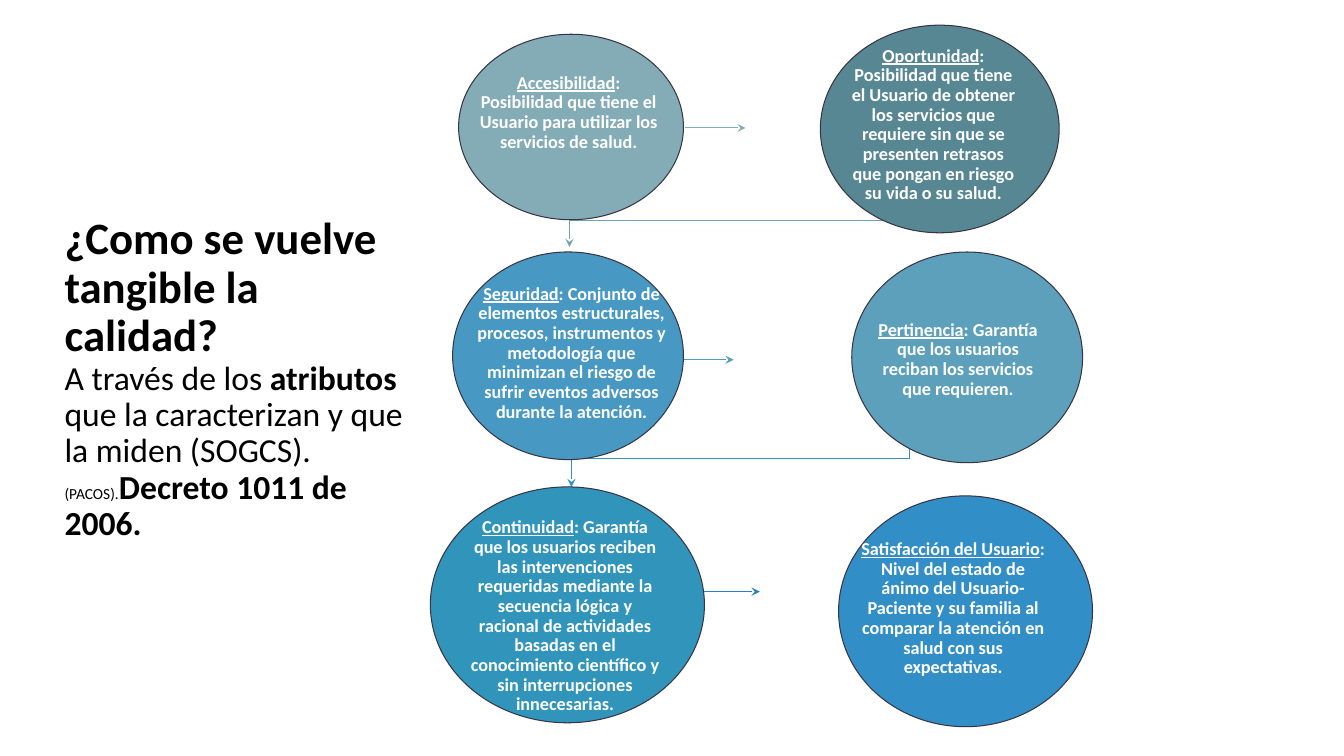
"""Builds a slide on the six attributes that make health care quality tangible."""
from lxml import etree
from pptx import Presentation
from pptx.dml.color import RGBColor
from pptx.enum import shapes, text
from pptx.oxml.ns import qn
from pptx.util import Pt

ATTRIBUTES = [
    ("Accesibilidad", ": Posibilidad que tiene el Usuario para utilizar los servicios de salud.",
     "84ACB6", (327.6, 24.5, 160.6, 132.5), (332, 32.4, 148.3, 96.5)),
    ("Oportunidad", ": Posibilidad que tiene el Usuario de obtener los servicios que requiere sin que se "
     "presenten retrasos que pongan en riesgo su vida o su salud.",
     "578793", (586, 18, 170.6, 148.3), (597.6, 32.4, 138.2, 113.8)),
    ("Seguridad", ": Conjunto de elementos estructurales, procesos, instrumentos y metodología que "
     "minimizan el riesgo de sufrir eventos adversos durante la atención.",
     "4798C2", (323.3, 180, 164.9, 148.3), (324.7, 197.3, 167, 110.2)),
    ("Pertinencia", ": Garantía que los usuarios reciban los servicios que requieren.",
     "5CA0BC", (608.4, 180, 164.9, 150.5), (617, 205.2, 134.6, 103.7)),
    ("Continuidad", ": Garantía que los usuarios reciben las intervenciones requeridas mediante la "
     "secuencia lógica y racional de actividades basadas en el conocimiento científico y sin "
     "interrupciones innecesarias.",
     "3194BA", (307.4, 347.8, 195.8, 168.5), (323.3, 373, 160.6, 134.6)),
    ("Satisfacción del Usuario", ": Nivel del estado de ánimo del Usuario-Paciente y su familia al "
     "comparar la atención en salud con sus expectativas.",
     "328EC7", (599, 354.2, 181.4, 164.9), (604.8, 383, 151.9, 103.7)),
]
ROW_ARROWS = [(489.6, 91.4, "84ACB6"), (481, 257, "529CBF"), (499.7, 422.6, "2682C4")]
ROW_ARROW_LENGTH = 43
RETURN_ARROWS = [
    ([(648, 134.6), (648, 157.3), (406.8, 157.3), (406.8, 176.4)], "6BA4B9"),
    ([(649.4, 306), (649.4, 327.6), (408.2, 327.6), (408.2, 347.8)], "3690C8"),
]
QUESTION = [
    [("¿Como se vuelve tangible la calidad?", 32, True)],
    [("A través de los ", 24, False), ("atributos ", 24, True),
     ("que la caracterizan y que la miden (SOGCS).", 24, False)],
    [("(PACOS).", 11, False), ("Decreto 1011 de 2006.", 24, True)],
]


def color(hex_value):
    """Return the colour for a hex string."""
    return RGBColor.from_string(hex_value)


def place(item, box):
    """Move and size an item to a box given in points."""
    item.left, item.top, item.width, item.height = (Pt(length) for length in box)


def add_run(paragraph, wording, size, bold, hex_value, underline=False):
    """Append a formatted run to a paragraph."""
    run = paragraph.add_run()
    run.text = wording
    font = run.font
    font.name, font.size, font.bold, font.underline = "Calibri", Pt(size), bold, underline
    font.color.rgb = color(hex_value)


def prepare_frame(frame, side, top, bottom):
    """Make a text frame wrap, centre vertically and keep its size."""
    frame.word_wrap = True
    frame.auto_size = text.MSO_AUTO_SIZE.NONE
    frame.vertical_anchor = text.MSO_ANCHOR.MIDDLE
    frame.margin_left = frame.margin_right = Pt(side)
    frame.margin_top, frame.margin_bottom = Pt(top), Pt(bottom)


def fill_question(title):
    """Write the question and its answer in the title placeholder."""
    place(title, (38.9, 49.7, 263.5, 434.2))
    frame = title.text_frame
    prepare_frame(frame, 7.2, 12, 3.6)
    for index, parts in enumerate(QUESTION):
        paragraph = frame.add_paragraph() if index else frame.paragraphs[0]
        paragraph.alignment = text.PP_ALIGN.LEFT
        paragraph.line_spacing = 0.9
        paragraph.space_before = Pt(0)
        for wording, size, bold in parts:
            add_run(paragraph, wording, size, bold, "000000")


def style_arrow(arrow, hex_value):
    """Give a line its colour, width and stealth arrowhead."""
    arrow.line.color.rgb = color(hex_value)
    arrow.line.width = Pt(0.75)
    etree.SubElement(arrow.line._get_or_add_ln(), qn("a:tailEnd"), type="stealth")


def add_row_arrow(slide, x, y, hex_value):
    """Draw the arrow from one attribute to the next in its row."""
    arrow = slide.shapes.add_connector(
        shapes.MSO_CONNECTOR.STRAIGHT, Pt(x), Pt(y), Pt(x + ROW_ARROW_LENGTH), Pt(y))
    style_arrow(arrow, hex_value)
    etree.SubElement(arrow._element.spPr, qn("a:effectLst"))


def add_return_arrow(slide, points, hex_value):
    """Draw the bent arrow from the end of a row to the next row."""
    start, *bends = [(Pt(x), Pt(y)) for x, y in points]
    builder = slide.shapes.build_freeform(*start)
    builder.add_line_segments(bends, close=False)
    arrow = builder.convert_to_shape()
    arrow.fill.background()
    style_arrow(arrow, hex_value)
    arrow.shadow.inherit = False


def add_attribute(slide, name, definition, hex_value, oval_box, wording_box):
    """Draw an attribute's oval with its name and definition."""
    oval = slide.shapes.add_shape(shapes.MSO_SHAPE.OVAL, *(Pt(length) for length in oval_box))
    oval.shadow.inherit = False
    oval.fill.solid()
    oval.fill.fore_color.rgb = color(hex_value)
    oval.line.color.rgb = color("373545")
    oval.line.width = Pt(0.75)
    caption = slide.shapes.add_textbox(*(Pt(length) for length in wording_box))
    prepare_frame(caption.text_frame, 10, 10.8, 10.8)
    paragraph = caption.text_frame.paragraphs[0]
    paragraph.alignment = text.PP_ALIGN.CENTER
    paragraph.line_spacing = 0.9
    add_run(paragraph, name, 13, True, "FFFFFF", underline=True)
    add_run(paragraph, definition, 13, True, "FFFFFF")


def main():
    """Build and save the slide."""
    deck = Presentation()
    deck.slide_width, deck.slide_height = Pt(960), Pt(540)
    slide = deck.slides.add_slide(deck.slide_layouts[5])
    fill_question(slide.shapes.title)
    for row_arrow in ROW_ARROWS:
        add_row_arrow(slide, *row_arrow)
    for return_arrow in RETURN_ARROWS:
        add_return_arrow(slide, *return_arrow)
    for attribute in ATTRIBUTES:
        add_attribute(slide, *attribute)
    deck.save("out.pptx")


if __name__ == "__main__":
    main()
